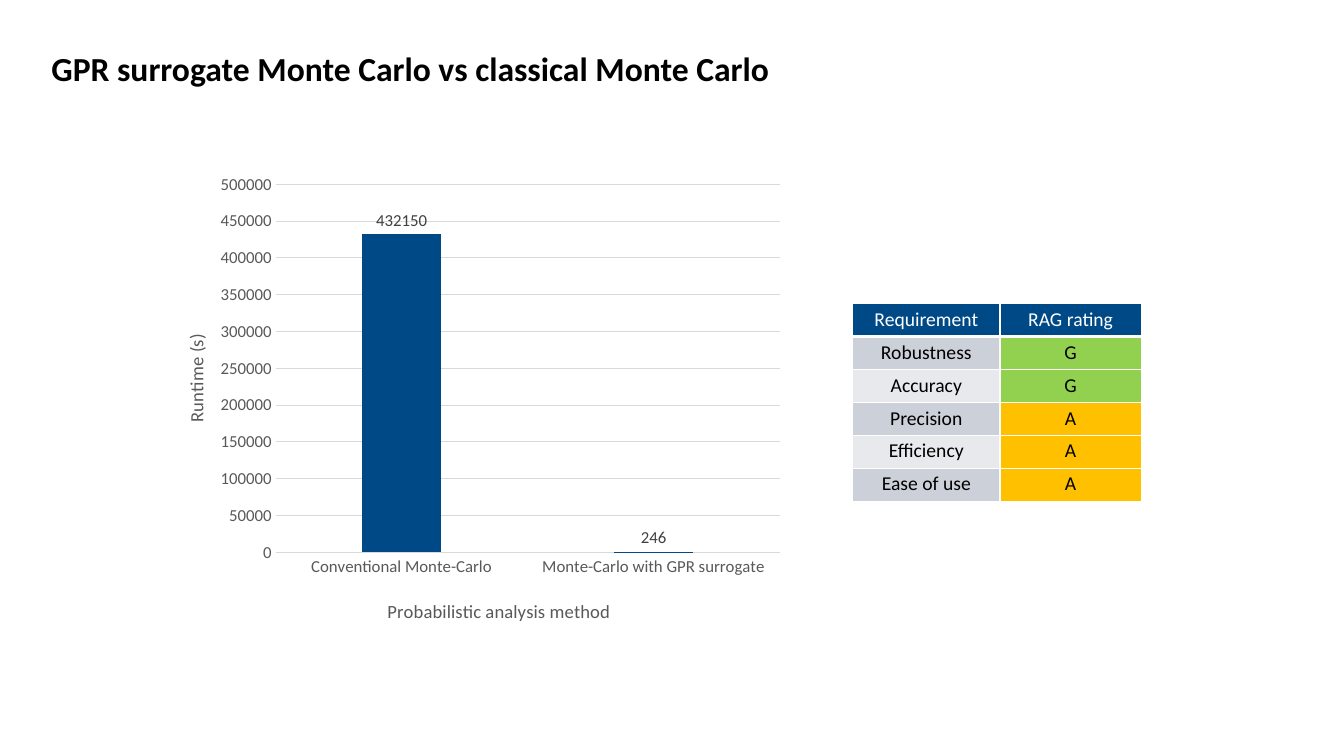
"""Build the slide comparing GPR surrogate and classical Monte Carlo."""
from lxml import etree
from pptx import Presentation
from pptx import util as u
from pptx.chart.data import CategoryChartData
from pptx.dml.color import RGBColor
from pptx.enum import chart as ch, text
from pptx.oxml import parse_xml
from pptx.oxml.ns import nsdecls, qn

HEADING = "GPR surrogate Monte Carlo vs classical Monte Carlo"
RUNTIMES = {"Conventional Monte-Carlo": 432150, "Monte-Carlo with GPR surrogate": 246}
METHOD_TITLE = "Probabilistic analysis method"
RUNTIME_TITLE = "Runtime (s)"
RATINGS = [
    ("Requirement", "RAG rating"),
    ("Robustness", "G"),
    ("Accuracy", "G"),
    ("Precision", "A"),
    ("Efficiency", "A"),
    ("Ease of use", "A"),
]

FONT = "Calibri"
BLACK = RGBColor(0x00, 0x00, 0x00)
WHITE = RGBColor(0xFF, 0xFF, 0xFF)
NAVY = RGBColor(0x00, 0x49, 0x87)
AXIS_GREY = RGBColor(0x59, 0x59, 0x59)
LABEL_GREY = RGBColor(0x40, 0x40, 0x40)
GRID_GREY = RGBColor(0xD9, 0xD9, 0xD9)
BANDS = [RGBColor(0xCC, 0xD0, 0xD9), RGBColor(0xE7, 0xE9, 0xED)]
RAG = {"G": RGBColor(0x92, 0xD0, 0x50), "A": RGBColor(0xFF, 0xC0, 0x00)}

COLUMN_WIDTHS = [u.Cm(3.71), u.Cm(3.56)]
ROW_HEIGHT = u.Cm(0.83)


def style_font(font, size, color, bold=False):
    font.name, font.size, font.bold = FONT, u.Pt(size), bold
    font.color.rgb = color


def write(frame, words, size=14, color=BLACK, bold=False, align=None):
    frame.text = words
    paragraph = frame.paragraphs[0]
    paragraph.alignment = align
    style_font(paragraph.runs[0].font, size, color, bold)
    return paragraph


def place(parent, index, **fractions):
    for old in parent.findall(qn("c:layout")):
        parent.remove(old)
    layout = parse_xml(f"<c:layout {nsdecls('c')}><c:manualLayout/></c:layout>")
    manual = layout[0]
    if "w" in fractions:
        etree.SubElement(manual, qn("c:layoutTarget")).set("val", "inner")
    for side in "xy":
        etree.SubElement(manual, qn(f"c:{side}Mode")).set("val", "edge")
    for key, value in fractions.items():
        etree.SubElement(manual, qn(f"c:{key}")).set("val", str(value))
    parent.insert(index, layout)


def add_borders(cell, bottom, top=1):
    properties = cell._tc.get_or_add_tcPr()
    for side, points in (("L", 1), ("R", 1), ("T", top), ("B", bottom)):
        properties.append(parse_xml(
            f'<a:ln{side} {nsdecls("a")} w="{u.Pt(points)}"><a:solidFill>'
            f'<a:srgbClr val="{WHITE}"/></a:solidFill></a:ln{side}>'))


def add_heading(slide):
    heading = slide.shapes.title
    heading.left, heading.top = u.Cm(1.04), u.Cm(1.24)
    heading.width, heading.height = u.Cm(18.92), u.Cm(1.09)
    frame = heading.text_frame
    frame.word_wrap = True
    frame.auto_size = text.MSO_AUTO_SIZE.NONE
    frame.vertical_anchor = text.MSO_ANCHOR.MIDDLE
    paragraph = write(frame, HEADING, size=24, bold=True, align=text.PP_ALIGN.LEFT)
    paragraph.line_spacing = 0.9


def add_runtime_chart(slide):
    data = CategoryChartData()
    data.categories = list(RUNTIMES)
    data.add_series("Series 1", list(RUNTIMES.values()))
    chart = slide.shapes.add_chart(
        ch.XL_CHART_TYPE.COLUMN_CLUSTERED,
        u.Cm(3.89), u.Cm(4.17), u.Cm(16.08), u.Cm(11.89), data).chart
    chart.has_legend = chart.has_title = False
    style_font(chart.font, 10, BLACK)

    methods, runtimes = chart.category_axis, chart.value_axis
    for axis, title in ((methods, METHOD_TITLE), (runtimes, RUNTIME_TITLE)):
        axis.major_tick_mark = axis.minor_tick_mark = ch.XL_TICK_MARK.NONE
        style_font(axis.tick_labels.font, 12, AXIS_GREY)
        write(axis.axis_title.text_frame, title, size=13.3, color=AXIS_GREY)
    runtimes.minimum_scale, runtimes.maximum_scale = 0, 500000
    runtimes.major_unit = 50000
    runtimes.format.line.fill.background()
    for line in (methods.format.line, runtimes.major_gridlines.format.line):
        line.color.rgb, line.width = GRID_GREY, u.Pt(0.75)

    bars = chart.plots[0]
    bars.gap_width, bars.overlap, bars.vary_by_categories = 219, -27, False
    fill = bars.series[0].format.fill
    fill.solid()
    fill.fore_color.rgb = NAVY
    bars.has_data_labels = True
    bars.data_labels.show_value = True
    bars.data_labels.position = ch.XL_LABEL_POSITION.OUTSIDE_END
    style_font(bars.data_labels.font, 12, LABEL_GREY)

    area = chart._chartSpace.find(".//" + qn("c:plotArea"))
    place(area, 0, x=0.19, y=0.04, w=0.79, h=0.78)
    place(area.find(qn("c:catAx")).find(qn("c:title")), 1, x=0.36, y=0.91)
    place(area.find(qn("c:valAx")).find(qn("c:title")), 1, x=0.04, y=0.35)


def add_rating_table(slide):
    table = slide.shapes.add_table(
        len(RATINGS), len(COLUMN_WIDTHS), u.Cm(21.49), u.Cm(7.65),
        sum(COLUMN_WIDTHS), ROW_HEIGHT * len(RATINGS)).table
    table.first_row = table.horz_banding = False
    for column, width in zip(table.columns, COLUMN_WIDTHS):
        column.width = width
    for r, entries in enumerate(RATINGS):
        table.rows[r].height = ROW_HEIGHT
        for c, entry in enumerate(entries):
            cell = table.cell(r, c)
            cell.margin_left = cell.margin_right = u.Cm(0.2)
            cell.margin_top = cell.margin_bottom = u.Cm(0.1)
            write(cell.text_frame, entry, color=BLACK if r else WHITE,
                  align=text.PP_ALIGN.CENTER)
            add_borders(cell, bottom=1 if r else 3)
            cell.fill.solid()
            band = BANDS[(r - 1) % 2] if r else NAVY
            cell.fill.fore_color.rgb = RAG.get(entry, band)


def main():
    deck = Presentation()
    deck.slide_width, deck.slide_height = u.Cm(33.87), u.Cm(19.05)
    slide = deck.slides.add_slide(deck.slide_layouts[5])
    add_heading(slide)
    add_runtime_chart(slide)
    add_rating_table(slide)
    deck.save("out.pptx")


if __name__ == "__main__":
    main()
